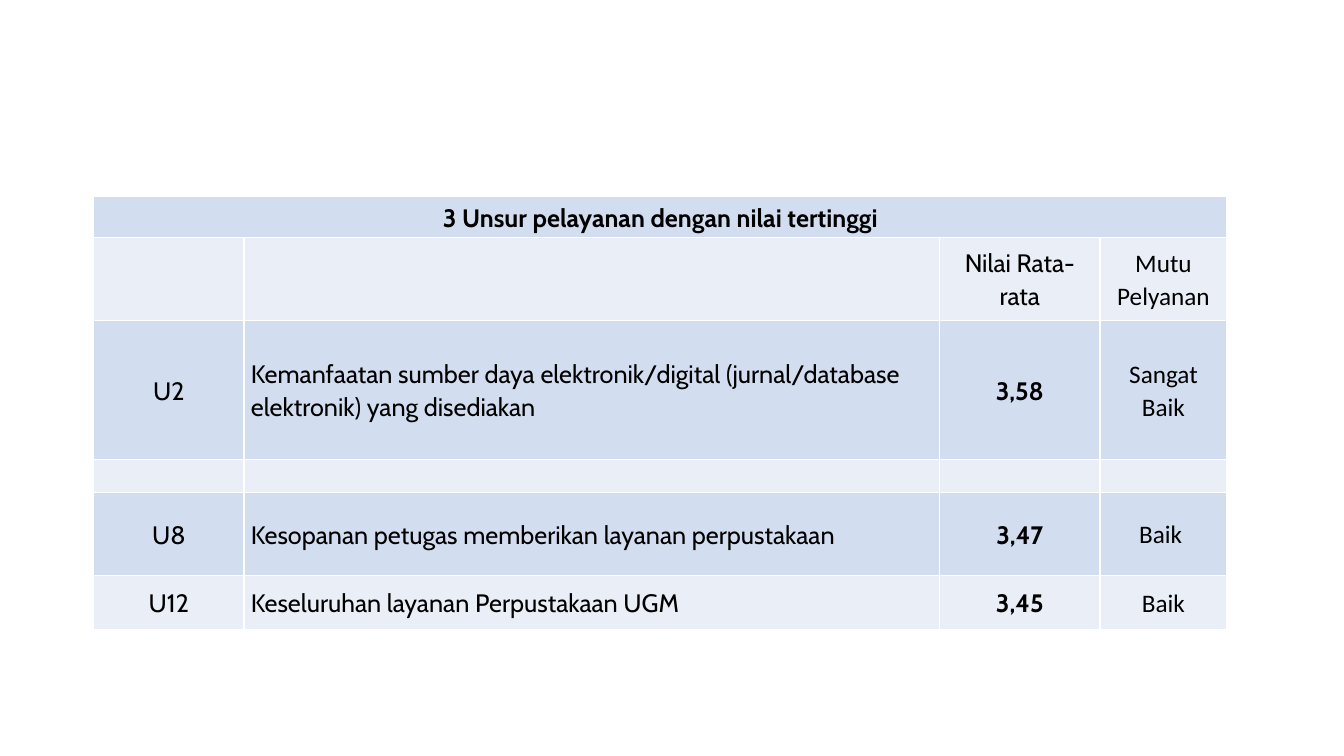
from pptx import Presentation
from pptx.dml.color import RGBColor
from pptx.enum.text import MSO_ANCHOR, PP_ALIGN
from pptx.oxml import parse_xml
from pptx.oxml.ns import nsdecls
from pptx.util import Inches, Pt

COLUMN_WIDTHS = [1.49, 6.9, 1.59, 1.26]
ROW_HEIGHTS = [0.41, 0.82, 1.38, 0.33, 0.82, 0.54]
ROW_FILLS = ["D2DEEF", "EAEFF7"]
ROWS = [
    ["3 Unsur pelayanan dengan nilai tertinggi", "", "", ""],
    ["", "", "Nilai Rata-rata", "Mutu Pelyanan"],
    ["U2", "Kemanfaatan sumber daya elektronik/digital (jurnal/database elektronik) yang disediakan",
     "3,58", "Sangat Baik"],
    ["", "", "", ""],
    ["U8", "Kesopanan petugas memberikan layanan perpustakaan", "3,47", "Baik "],
    ["U12", "Keseluruhan layanan Perpustakaan UGM", "3,45", "Baik"],
]


def color(value):
    """Turn a hex string into a colour."""
    return RGBColor.from_string(value)


def add_borders(cell, line_color="FFFFFF", width=1):
    """Draw a solid line on all four sides of a cell."""
    properties = cell._tc.get_or_add_tcPr()
    for side in ("L", "R", "T", "B"):
        properties.append(parse_xml(
            f'<a:ln{side} {nsdecls("a")} w="{Pt(width)}"><a:solidFill>'
            f'<a:srgbClr val="{line_color}"/></a:solidFill></a:ln{side}>'))


def style_cell(cell, fill):
    """Set the borders, fill, margins and anchor of a cell."""
    add_borders(cell)
    cell.fill.solid()
    cell.fill.fore_color.rgb = color(fill)
    cell.margin_left = cell.margin_right = Inches(0.07)
    cell.margin_top = cell.margin_bottom = 0
    cell.vertical_anchor = MSO_ANCHOR.MIDDLE


def write_text(cell, text, font="Cabin", size=18, bold=False, align=PP_ALIGN.CENTER):
    """Write one formatted paragraph into a cell."""
    para = cell.text_frame.paragraphs[0]
    para.alignment = align
    para.line_spacing = 1.07
    span = para.add_run()
    span.text = text
    span.font.name = font
    span.font.size = Pt(size)
    span.font.bold = bold
    span.font.color.rgb = color("000000")


def add_score_table(page, left, top):
    """Add the table of the highest-rated service elements."""
    frame = page.shapes.add_table(
        len(ROWS), len(COLUMN_WIDTHS), Inches(left), Inches(top),
        Inches(sum(COLUMN_WIDTHS)), Inches(sum(ROW_HEIGHTS)))
    table = frame.table
    for column, width in zip(table.columns, COLUMN_WIDTHS):
        column.width = Inches(width)
    for row, height in zip(table.rows, ROW_HEIGHTS):
        row.height = Inches(height)
    table.cell(0, 0).merge(table.cell(0, len(COLUMN_WIDTHS) - 1))
    for row_index, texts in enumerate(ROWS):
        for column_index, text in enumerate(texts):
            cell = table.cell(row_index, column_index)
            style_cell(cell, ROW_FILLS[row_index % 2])
            if text:
                is_score = column_index == 2 and row_index > 1
                write_text(
                    cell, text,
                    font="Calibri" if column_index == 3 else "Cabin",
                    bold=row_index == 0 or is_score,
                    align=PP_ALIGN.LEFT if column_index == 1 else PP_ALIGN.CENTER)


def main():
    """Build the slide and save the deck."""
    deck = Presentation()
    deck.slide_width = Inches(13.33)
    deck.slide_height = Inches(7.5)
    page = deck.slides.add_slide(deck.slide_layouts[6])
    add_score_table(page, left=0.93, top=1.95)
    deck.save("out.pptx")


if __name__ == "__main__":
    main()
